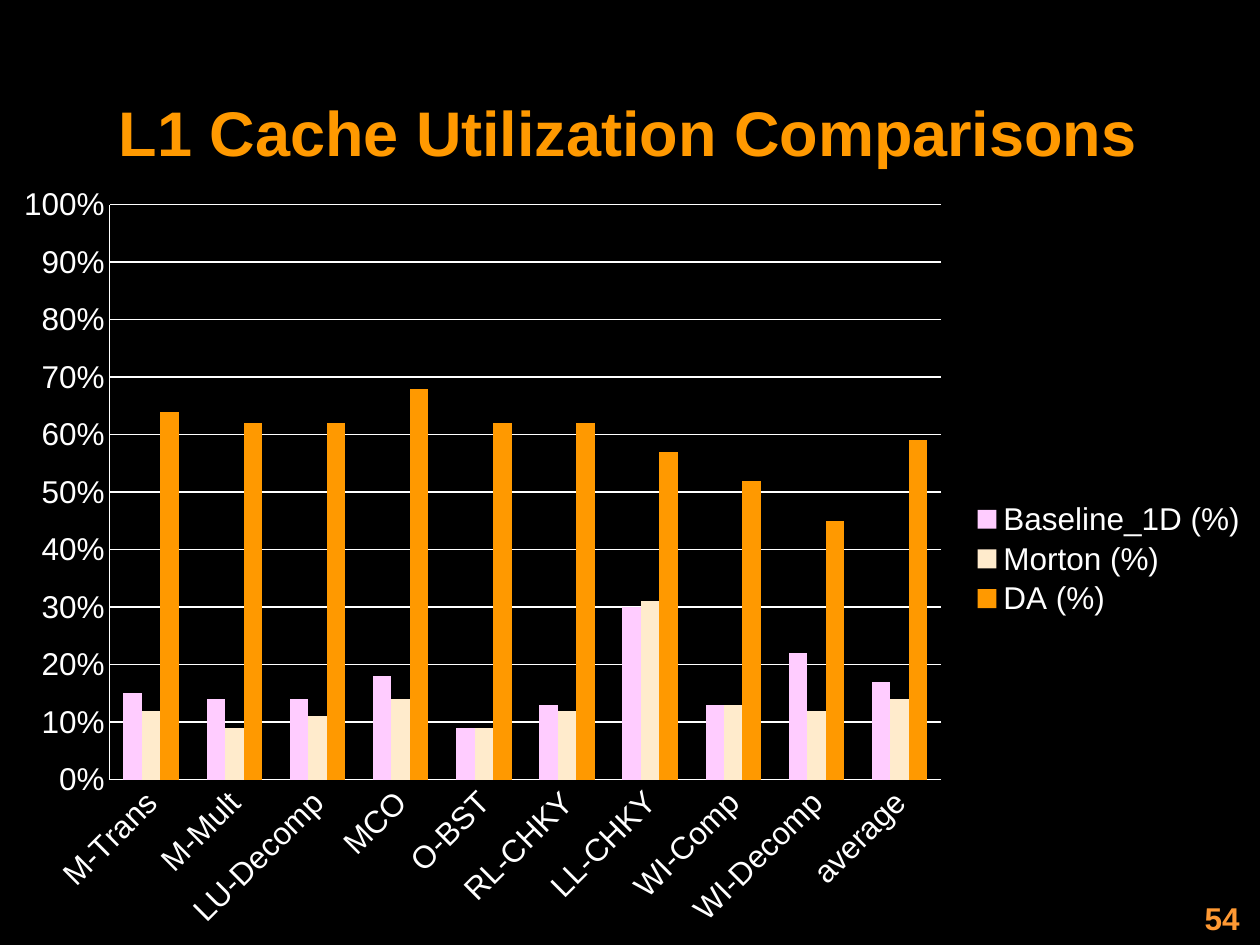
from lxml import etree
from pptx import Presentation
from pptx.chart.data import CategoryChartData
from pptx.dml.color import RGBColor
from pptx.enum.chart import XL_CHART_TYPE, XL_LEGEND_POSITION, XL_TICK_MARK
from pptx.enum.text import MSO_ANCHOR, PP_ALIGN
from pptx.oxml.ns import qn
from pptx.util import Emu, Pt

COLUMNS = XL_CHART_TYPE.COLUMN_CLUSTERED
LEGEND_RIGHT = XL_LEGEND_POSITION.RIGHT
NO_TICK = XL_TICK_MARK.NONE
MIDDLE = MSO_ANCHOR.MIDDLE
CENTER, RIGHT = PP_ALIGN.CENTER, PP_ALIGN.RIGHT

EMU_PER_PX = 914400 / 126
FONT = "Arial"
COLORS = {
    "background": "000000",
    "text": "FFFFFF",
    "title": "FF9900",
    "number": "FF9933",
    "baseline": "FFCCFF",
    "morton": "FFEBCC",
    "da": "FF9900",
}

CATEGORIES = ["M-Trans", "M-Mult", "LU-Decomp", "MCO", "O-BST",
              "RL-CHKY", "LL-CHKY", "WI-Comp", "WI-Decomp", "average"]
SERIES = [
    ("Baseline_1D (%)", "baseline",
     [0.15, 0.14, 0.14, 0.18, 0.09, 0.13, 0.3, 0.13, 0.22, 0.17]),
    ("Morton (%)", "morton",
     [0.12, 0.09, 0.11, 0.14, 0.09, 0.12, 0.31, 0.13, 0.12, 0.14]),
    ("DA (%)", "da",
     [0.64, 0.62, 0.62, 0.68, 0.62, 0.62, 0.57, 0.52, 0.45, 0.59]),
]


def px(n):
    return Emu(round(n * EMU_PER_PX))


def box(*lengths):
    return [px(n) for n in lengths]


def color(name):
    return RGBColor.from_string(COLORS[name])


def style_font(font, size, name, bold=False):
    font.name = FONT
    font.size = Pt(size)
    font.bold = bold
    font.color.rgb = color(name)


def write(tf, text, size, name, align):
    tf.word_wrap = True
    p = tf.paragraphs[0]
    p.alignment = align
    r = p.add_run()
    r.text = text
    style_font(r.font, size, name, bold=True)


def add_title(s, text):
    sp = s.shapes.title
    sp.left, sp.top, sp.width, sp.height = box(13, 73, 1230, 117)
    sp.text_frame.vertical_anchor = MIDDLE
    write(sp.text_frame, text, 36, "title", CENTER)


def add_page_number(s, text):
    sp = s.shapes.add_textbox(*box(990, 893, 262, 63))
    write(sp.text_frame, text, 18, "number", RIGHT)


def set_layout(parent, index, x, y, w, h, inner=False):
    """Place a chart part by fractions of the chart area."""
    for old in parent.findall(qn("c:layout")):
        parent.remove(old)
    layout = etree.Element(qn("c:layout"))
    manual = etree.SubElement(layout, qn("c:manualLayout"))
    values = [("xMode", "edge"), ("yMode", "edge"),
              ("x", x), ("y", y), ("w", w), ("h", h)]
    if inner:
        values.insert(0, ("layoutTarget", "inner"))
    for tag, val in values:
        etree.SubElement(manual, qn(f"c:{tag}")).set("val", str(val))
    parent.insert(index, layout)


def style_axis(axis):
    axis.major_tick_mark = axis.minor_tick_mark = NO_TICK
    style_font(axis.tick_labels.font, 18, "text")
    axis.format.line.color.rgb = color("text")
    axis.format.line.width = Pt(0.75)


def add_column_chart(s):
    data = CategoryChartData(number_format="0%")
    data.categories = CATEGORIES
    for name, _, values in SERIES:
        data.add_series(name, values)
    left, top, width, height = 0, 173, 1260, 772
    chart = s.shapes.add_chart(COLUMNS, *box(left, top, width, height), data).chart
    chart.has_title = False
    style_font(chart.font, 18, "text")

    # Columns
    plot = chart.plots[0]
    plot.gap_width, plot.overlap = 150, 0
    plot.vary_by_categories = False
    for series, (_, name, _) in zip(plot.series, SERIES):
        series.format.fill.solid()
        series.format.fill.fore_color.rgb = color(name)

    # Axes
    cat, val = chart.category_axis, chart.value_axis
    for axis in (cat, val):
        style_axis(axis)
    labels = cat._element.find(qn("c:txPr"))
    labels.find(qn("a:bodyPr")).set("rot", str(-45 * 60000))
    val.minimum_scale, val.maximum_scale, val.major_unit = 0, 1, 0.1
    val.tick_labels.number_format = "0%"
    val.tick_labels.number_format_is_linked = False
    val.has_major_gridlines = True
    grid = val.major_gridlines.format.line
    grid.color.rgb = color("text")
    grid.width = Pt(0.75)

    # Legend and plot positions
    chart.has_legend = True
    legend = chart.legend
    legend.position = LEGEND_RIGHT
    legend.include_in_layout = False
    style_font(legend.font, 18, "text")
    set_layout(legend._element, 1, 0.77, 0.42, 0.22, 0.16)
    plot_area = chart._chartSpace.chart.plotArea
    set_layout(plot_area, 0, round(110 / width, 3), round((205 - top) / height, 3),
               round(831 / width, 3), round(575 / height, 3), inner=True)


def main():
    prs = Presentation()
    prs.slide_width, prs.slide_height = box(1260, 945)
    s = prs.slides.add_slide(prs.slide_layouts[5])
    s.background.fill.solid()
    s.background.fill.fore_color.rgb = color("background")
    add_title(s, "L1 Cache Utilization Comparisons")
    add_column_chart(s)
    add_page_number(s, "54")
    prs.save("out.pptx")


if __name__ == "__main__":
    main()
